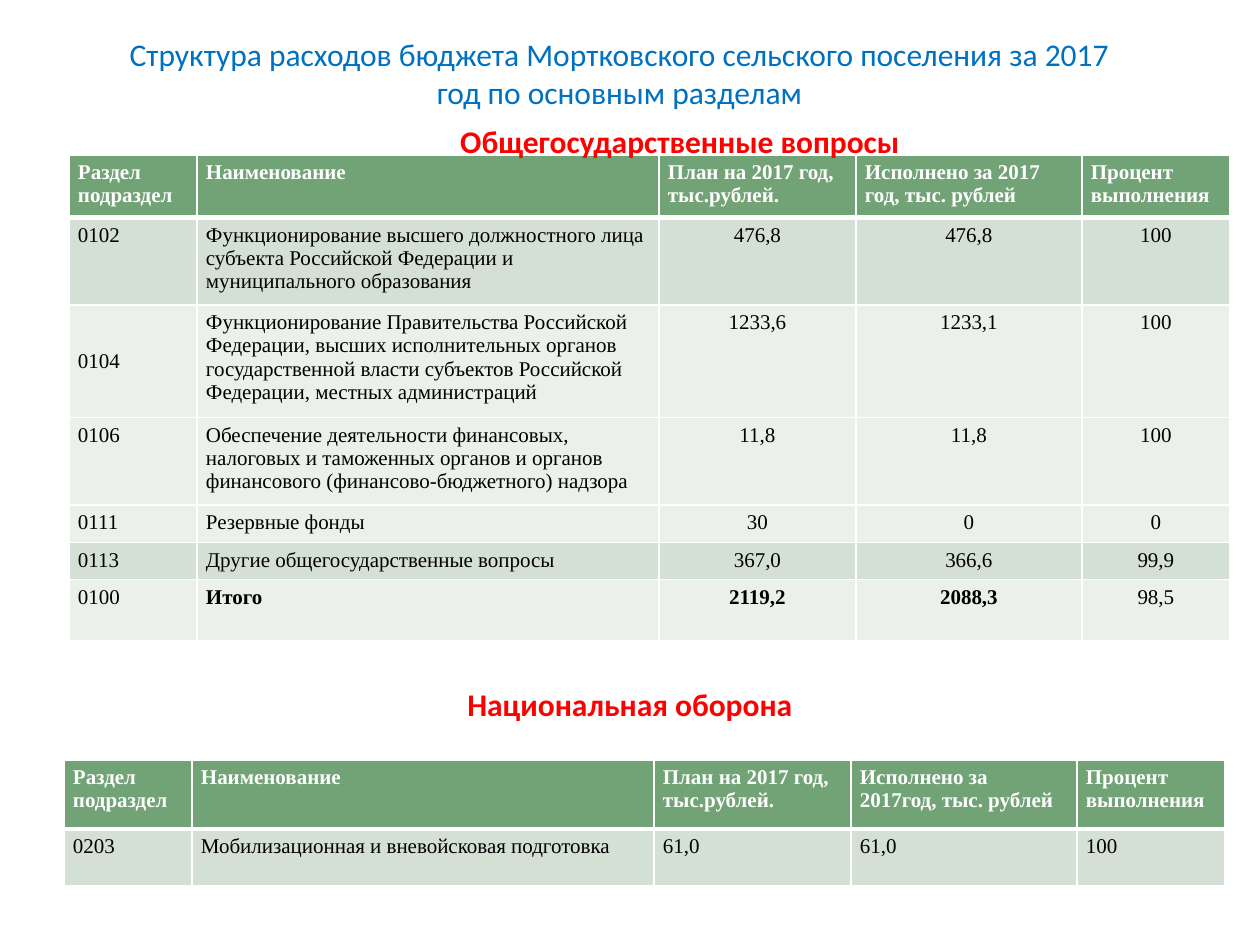
from lxml.etree import SubElement
from pptx import Presentation
from pptx.dml.color import RGBColor
from pptx.enum.text import MSO_ANCHOR, PP_ALIGN
from pptx.oxml.ns import qn
from pptx.util import Pt

EMU_PER_PX = 914400 / 126

WHITE = RGBColor(0xFF, 0xFF, 0xFF)
BLACK = RGBColor(0x00, 0x00, 0x00)
BLUE = RGBColor(0x00, 0x70, 0xC0)
RED = RGBColor(0xFF, 0x00, 0x00)
HEADER_GREEN = RGBColor(0x72, 0xA3, 0x76)
DARK_BAND = RGBColor(0xD5, 0xE0, 0xD5)
LIGHT_BAND = RGBColor(0xEB, 0xF0, 0xEB)

THIN, THICK = Pt(0.96), Pt(3)
COLUMN_WIDTHS = [128, 462, 197, 226, 148]


def header_row(done_label):
    return ["Раздел подраздел", "Наименование", "План на 2017 год, тыс.рублей.",
            done_label, "Процент\nвыполнения"]


GENERAL_ROWS = [
    header_row("Исполнено за 2017 год, тыс. рублей"),
    ["0102", "Функционирование высшего должностного лица субъекта Российской "
     "Федерации и муниципального образования", "476,8", "476,8", "100"],
    ["0104", "Функционирование Правительства Российской Федерации, высших "
     "исполнительных органов государственной власти субъектов Российской "
     "Федерации, местных администраций", "1233,6", "1233,1", "100"],
    ["0106", "Обеспечение деятельности финансовых, налоговых и таможенных органов "
     "и органов финансового (финансово-бюджетного) надзора", "11,8", "11,8", "100"],
    ["0111", "Резервные фонды", "30", "0", "0"],
    ["0113", "Другие общегосударственные вопросы", "367,0", "366,6", "99,9"],
    ["0100", "Итого", "2119,2", "2088,3", "98,5"],
]
GENERAL_HEIGHTS = [60, 84, 108, 84, 37, 36, 61]
GENERAL_FILLS = [HEADER_GREEN, DARK_BAND, LIGHT_BAND, LIGHT_BAND, LIGHT_BAND,
                 DARK_BAND, LIGHT_BAND]

DEFENCE_ROWS = [
    header_row("Исполнено за 2017год, тыс. рублей"),
    ["0203", "Мобилизационная и вневойсковая подготовка", "61,0", "61,0", "100"],
]
DEFENCE_HEIGHTS = [69, 57]
DEFENCE_FILLS = [HEADER_GREEN, DARK_BAND]


def px(length):
    return round(length * EMU_PER_PX)


def style_font(font, name, size, color, bold):
    font.name = name
    font.size = Pt(size)
    font.color.rgb = color
    font.bold = bold


def add_heading(page, text, left, top, width, height, color, bold=True, wrap=True):
    box = page.shapes.add_textbox(px(left), px(top), px(width), px(height))
    box.text_frame.word_wrap = wrap
    box.text_frame.text = text
    para = box.text_frame.paragraphs[0]
    para.alignment = PP_ALIGN.CENTER
    style_font(para.runs[0].font, "Calibri", 18, color, bold)


def set_borders(cell, top, bottom):
    """Draw white cell borders; must run before the cell gets its fill."""
    properties = cell._tc.get_or_add_tcPr()
    for side, width in (("L", THIN), ("R", THIN), ("T", top), ("B", bottom)):
        line = SubElement(properties, qn(f"a:ln{side}"), w=str(int(width)))
        fill = SubElement(line, qn("a:solidFill"))
        SubElement(fill, qn("a:srgbClr"), val=str(WHITE))


def fill_cell(cell, text, fill, color, bold, alignment):
    cell.fill.solid()
    cell.fill.fore_color.rgb = fill
    cell.margin_left = cell.margin_right = px(9)
    cell.margin_top = cell.margin_bottom = px(6)
    cell.text_frame.text = text
    for para in cell.text_frame.paragraphs:
        para.alignment = alignment
        for span in para.runs:
            style_font(span.font, "Times New Roman", 12, color, bold)


def add_budget_table(page, left, top, rows, heights, fills, value_alignment):
    frame = page.shapes.add_table(len(rows), len(COLUMN_WIDTHS), px(left), px(top),
                                  px(sum(COLUMN_WIDTHS)), px(sum(heights)))
    table = frame.table
    for column, width in zip(table.columns, COLUMN_WIDTHS):
        column.width = px(width)
    for r, (texts, height, fill) in enumerate(zip(rows, heights, fills)):
        table.rows[r].height = px(height)
        is_header = r == 0
        for c, text in enumerate(texts):
            cell = table.cell(r, c)
            set_borders(cell, top=THICK if r == 1 else THIN,
                        bottom=THICK if is_header else THIN)
            is_total = texts[1] == "Итого" and 1 <= c <= 3
            is_value = not is_header and c >= 2
            fill_cell(cell, text, fill, WHITE if is_header else BLACK,
                      is_header or is_total,
                      value_alignment if is_value else PP_ALIGN.LEFT)
    return table


def main():
    deck = Presentation()
    deck.slide_width, deck.slide_height = px(1260), px(945)
    page = deck.slides.add_slide(deck.slide_layouts[6])

    add_heading(page, "Структура расходов бюджета Мортковского сельского поселения "
                "за 2017 год по основным разделам", 98, 29, 1043, 86, BLUE, bold=False)
    general = add_budget_table(page, 69, 155, GENERAL_ROWS, GENERAL_HEIGHTS,
                               GENERAL_FILLS, PP_ALIGN.CENTER)
    general.cell(2, 0).vertical_anchor = MSO_ANCHOR.MIDDLE
    add_heading(page, "Общегосударственные вопросы", 333, 116, 694, 49, RED)
    add_heading(page, "Национальная оборона", 453, 679, 354, 51, RED, wrap=False)
    add_budget_table(page, 64, 760, DEFENCE_ROWS, DEFENCE_HEIGHTS,
                     DEFENCE_FILLS, PP_ALIGN.LEFT)

    deck.save("out.pptx")


if __name__ == "__main__":
    main()
